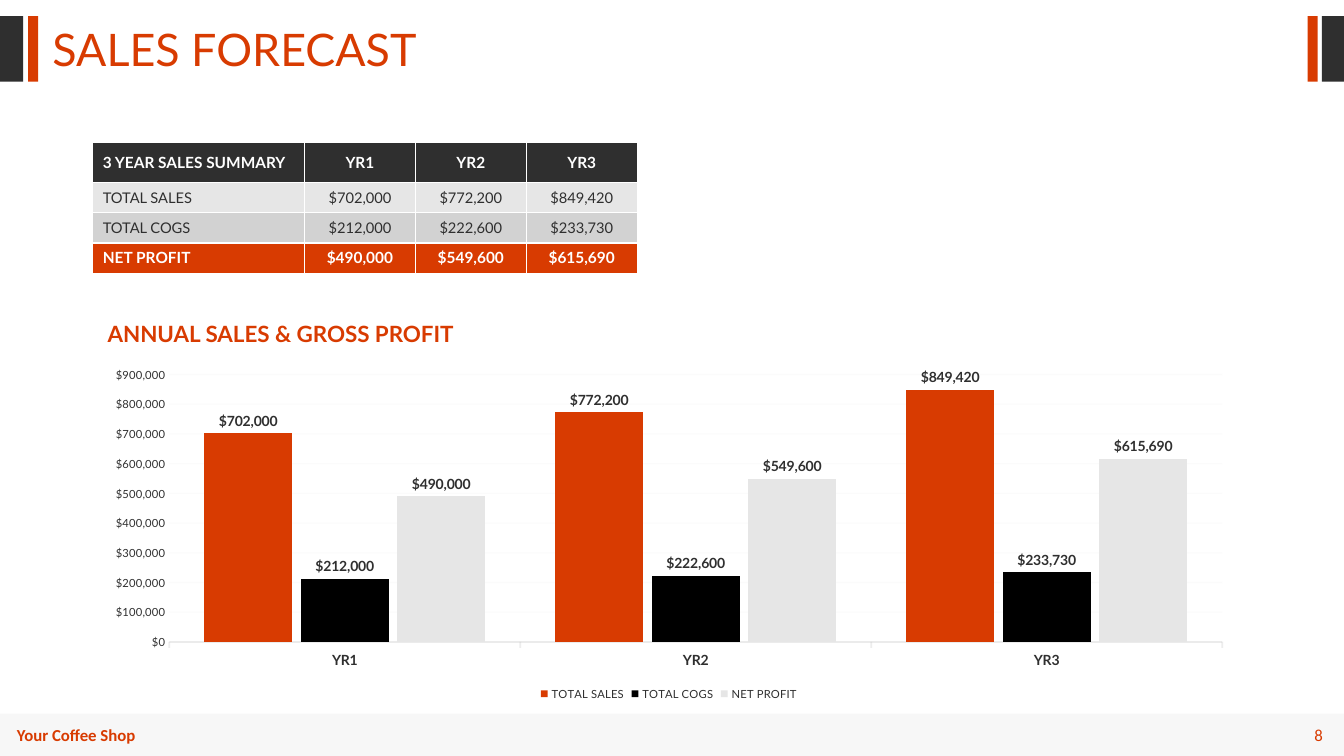
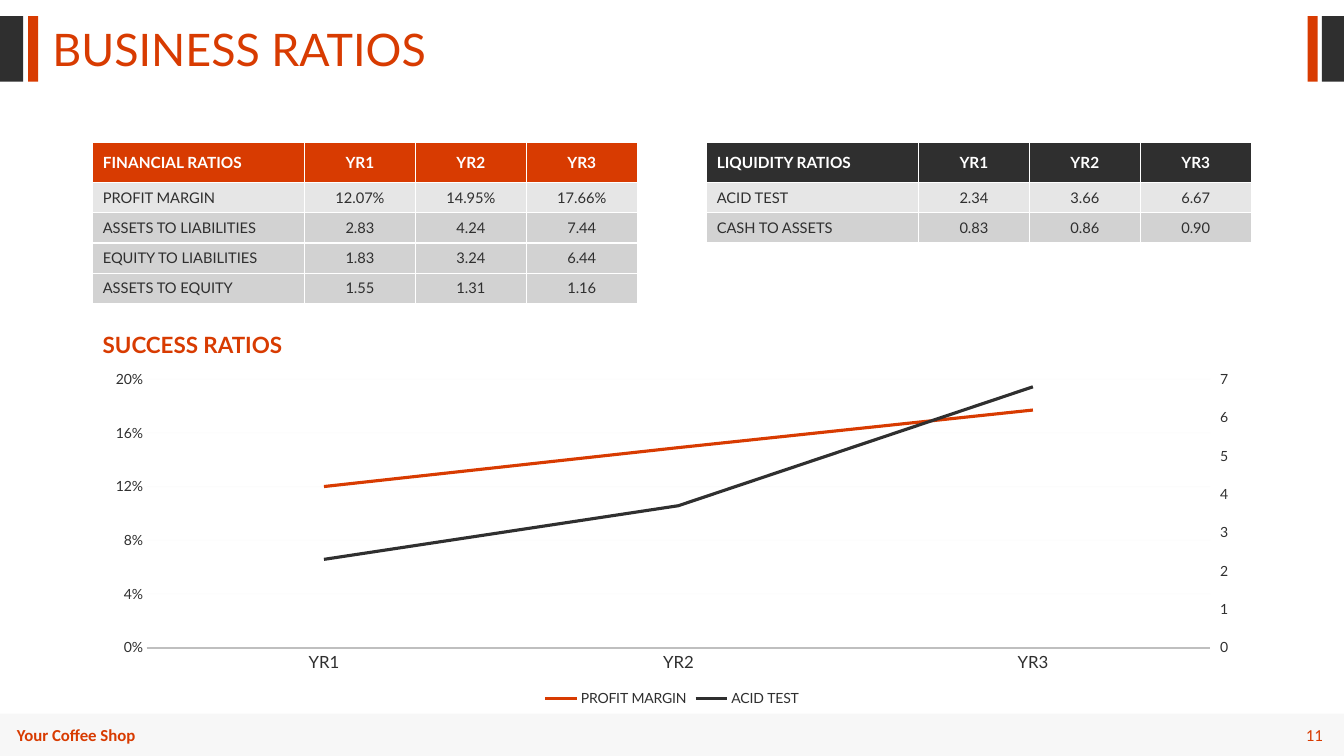
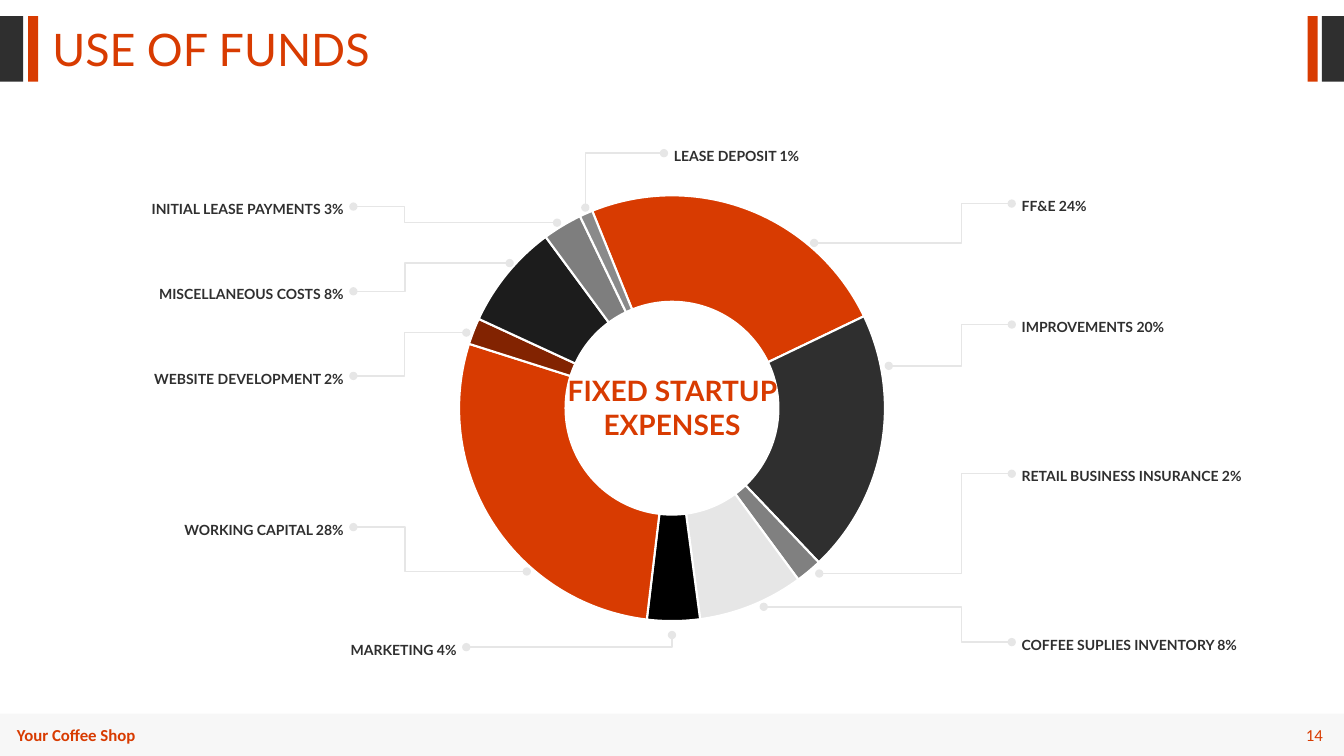
from collections import namedtuple
from copy import deepcopy
from dataclasses import dataclass

from lxml import etree
from pptx import Presentation
from pptx import util as u
from pptx.chart import axis as axes
from pptx.chart import data as chart_data
from pptx.dml.color import RGBColor
from pptx.enum import chart as kinds
from pptx.enum import shapes, text
from pptx.oxml.ns import qn


@dataclass(frozen=True)
class Theme:
    accent: str = "D83B01"
    dark: str = "2F2F2F"
    black: str = "000000"
    white: str = "FFFFFF"
    pale: str = "E6E6E6"
    silver: str = "D2D2D2"
    axis: str = "BFBFBF"
    grid: str = "F2F2F2"
    slices: tuple = ("D83B01", "2F2F2F", "808080", "E6E6E6", "000000",
                     "D83B01", "822301", "1C1C1C", "7E7E7E", "8A8A8A")
    font: str = "Lato"
    footer_font: str = "Calibri"
    title: float = 32
    center: float = 20
    heading: float = 16
    footer: float = 12
    table_head: float = 11
    table_body: float = 10.5
    label: float = 10
    small: float = 8


THEME = Theme()
LEFT, CENTER, RIGHT = text.PP_ALIGN.LEFT, text.PP_ALIGN.CENTER, text.PP_ALIGN.RIGHT
TOP, MIDDLE = text.MSO_ANCHOR.TOP, text.MSO_ANCHOR.MIDDLE
YEARS = ("YR1", "YR2", "YR3")
DOLLARS = '"$"#,##0'


class Box(namedtuple("Box", "left top width height")):
    def lengths(self):
        return [u.Inches(value) for value in self]


Callout = namedtuple("Callout", "label dot end bend")


def color(value):
    return RGBColor.from_string(value)


def set_font(font, size, fill=THEME.dark, bold=False, name=THEME.font):
    font.size, font.bold, font.name = u.Pt(size), bold, name
    font.color.rgb = color(fill)


def write(frame, words, align=LEFT, anchor=TOP, spacing=None, **font):
    frame.word_wrap = True
    frame.vertical_anchor = anchor
    para = frame.paragraphs[0]
    para.alignment = align
    if spacing:
        para.line_spacing = spacing
    span = para.add_run()
    span.text = words
    set_font(span.font, **font)


def add_text(page, box, words, **style):
    shape = page.shapes.add_textbox(*box.lengths())
    write(shape.text_frame, words, **style)
    return shape


def add_bar(page, box, fill):
    bar = page.shapes.add_shape(shapes.MSO_SHAPE.RECTANGLE, *box.lengths())
    bar.shadow.inherit = False
    bar.fill.solid()
    bar.fill.fore_color.rgb = color(fill)
    bar.line.fill.background()
    return bar


def fade(root, route, opacity):
    """Give each RGB colour under the XPath route an opacity in percent."""
    for node in root.xpath(route + "//a:srgbClr"):
        etree.SubElement(node, qn("a:alpha"), val=str(opacity * 1000))


def share_frame(layout, page):
    """Draw the bands and footer through a page, then move them to its layout."""
    band = add_bar(page, Box(0, 7.08, 13.33, 0.42), THEME.pale)
    fade(band.element, "./p:spPr", 30)
    parts = [band]
    for left, width, fill in ((0, 0.23, THEME.dark), (0.28, 0.1, THEME.accent),
                              (12.97, 0.1, THEME.accent), (13.11, 0.22, THEME.dark)):
        parts.append(add_bar(page, Box(left, 0.16, width, 0.65), fill))
    parts.append(add_text(page, Box(0.07, 7.14, 1.84, 0.3), "Your Coffee Shop",
                          size=THEME.footer, fill=THEME.accent, bold=True,
                          name=THEME.footer_font))
    for number, part in enumerate(parts, start=100):
        part.element.xpath(".//p:cNvPr")[0].set("id", str(number))
        layout.shapes.element.append(part.element)


def add_page(deck, layout, title, number):
    page = deck.slides.add_slide(layout)
    frame = page.shapes.title.text_frame
    frame.auto_size = text.MSO_AUTO_SIZE.NONE
    write(frame, title, spacing=0.8, size=THEME.title, fill=THEME.accent)
    add_text(page, Box(12.35, 7.14, 0.87, 0.3), str(number), align=RIGHT, anchor=MIDDLE,
             size=THEME.footer, fill=THEME.accent, name=THEME.footer_font)
    return page


def add_heading(page, box, words, align=LEFT):
    add_text(page, box, words, align=align, size=THEME.heading,
             fill=THEME.accent, bold=True)


def add_year_table(page, left, top, name, rows, head_fill, total=False):
    """Place a table with a column per year; total marks the last row."""
    heights = [0.4] + [0.3] * len(rows)
    widths = [2.1, 1.1, 1.1, 1.1]
    box = Box(left, top, sum(widths), sum(heights))
    table = page.shapes.add_table(len(heights), len(widths), *box.lengths()).table
    table.horz_banding = False
    for column, width in zip(table.columns, widths):
        column.width = u.Inches(width)
    for index, (height, values) in enumerate(zip(heights, [(name, *YEARS), *rows])):
        table.rows[index].height = u.Inches(height)
        is_total = total and index == len(rows)
        strong = index == 0 or is_total
        if strong:
            fill = THEME.accent if is_total else head_fill
        else:
            fill = THEME.pale if index == 1 else THEME.silver
        for column, value in enumerate(values):
            cell = table.cell(index, column)
            cell.fill.solid()
            cell.fill.fore_color.rgb = color(fill)
            cell.vertical_anchor = MIDDLE
            write(cell.text_frame, value, align=CENTER if column else LEFT, anchor=MIDDLE,
                  size=THEME.table_head if strong else THEME.table_body,
                  fill=THEME.white if strong else THEME.dark, bold=strong)


def add_chart(page, box, kind, categories, series, size, legend=True):
    data = chart_data.CategoryChartData()
    data.categories = categories
    for name, values in series:
        data.add_series(name, values)
    chart = page.shapes.add_chart(kind, *box.lengths(), data).chart
    chart.has_title = False
    set_font(chart.font, size)
    chart.plots[0].vary_by_categories = False
    chart.has_legend = legend
    if legend:
        chart.legend.position = kinds.XL_LEGEND_POSITION.BOTTOM
        chart.legend.include_in_layout = False
        set_font(chart.legend.font, size)
    return chart


def style_category_axis(axis, size, width, tick=kinds.XL_TICK_MARK.NONE, bold=False):
    axis.major_tick_mark = tick
    axis.format.line.color.rgb = color(THEME.axis)
    axis.format.line.width = u.Pt(width)
    set_font(axis.tick_labels.font, size, bold=bold)


def style_value_axis(axis, size, maximum, unit, number_format, grid=None):
    axis.minimum_scale, axis.maximum_scale, axis.major_unit = 0, maximum, unit
    axis.major_tick_mark = kinds.XL_TICK_MARK.NONE
    axis.format.line.fill.background()
    axis.tick_labels.number_format = number_format
    axis.tick_labels.number_format_is_linked = False
    set_font(axis.tick_labels.font, size)
    axis.has_major_gridlines = bool(grid)
    if grid:
        line = axis.major_gridlines.format.line
        line.color.rgb = color(grid)
        line.width = u.Pt(0.75)


def add_sales_chart(page, box):
    chart = add_chart(page, box, kinds.XL_CHART_TYPE.COLUMN_CLUSTERED, YEARS,
                      (("TOTAL SALES", (702000, 772200, 849420)),
                       ("TOTAL COGS", (212000, 222600, 233730)),
                       ("NET PROFIT", (490000, 549600, 615690))), THEME.small)
    style_category_axis(chart.category_axis, THEME.label, 1.25,
                        kinds.XL_TICK_MARK.OUTSIDE, bold=True)
    style_value_axis(chart.value_axis, THEME.small, 900000, 100000, DOLLARS, THEME.grid)
    fade(chart.element, "//c:majorGridlines", 30)
    fade(chart.element, "//c:catAx/c:spPr", 27)
    plot = chart.plots[0]
    plot.gap_width, plot.overlap = 80, -10
    for series, fill in zip(plot.series, (THEME.accent, THEME.black, THEME.pale)):
        series.format.fill.solid()
        series.format.fill.fore_color.rgb = color(fill)
        labels = series.data_labels
        labels.show_value = True
        labels.position = kinds.XL_LABEL_POSITION.OUTSIDE_END
        labels.number_format = DOLLARS
        labels.number_format_is_linked = False
        set_font(labels.font, THEME.label, bold=True)


def add_right_axis(chart):
    """Move the second line to its own axes and return the new value axis."""
    area = chart.element.xpath("//c:plotArea")[0]
    left_lines = area.xpath("c:lineChart")[0]
    right_lines = deepcopy(left_lines)
    left_lines.remove(left_lines.xpath("c:ser")[1])
    right_lines.remove(right_lines.xpath("c:ser")[0])
    left_lines.addnext(right_lines)
    old_category, old_value = area.xpath("c:catAx")[0], area.xpath("c:valAx")[0]
    category, value = deepcopy(old_category), deepcopy(old_value)
    old_value.addnext(value)
    value.addnext(category)
    new_ids = {old_category.xpath("c:axId")[0].get("val"): "5001",
               old_value.xpath("c:axId")[0].get("val"): "5002"}
    for part in (right_lines, category, value):
        for node in part.xpath("c:axId | c:crossAx"):
            node.set("val", new_ids[node.get("val")])
    value.xpath("c:axPos")[0].set("val", "r")
    hidden_axis, right_axis = axes.CategoryAxis(category), axes.ValueAxis(value)
    hidden_axis.visible = False
    hidden_axis.crosses = kinds.XL_AXIS_CROSSES.MAXIMUM
    right_axis.tick_label_position = kinds.XL_TICK_LABEL_POSITION.HIGH
    return right_axis


def add_ratio_chart(page, box):
    chart = add_chart(page, box, kinds.XL_CHART_TYPE.LINE, YEARS,
                      (("PROFIT MARGIN", (0.12, 0.149, 0.177)),
                       ("ACID TEST", (2.3, 3.7, 6.8))), THEME.label)
    for series, stroke in zip(chart.plots[0].series, (THEME.accent, THEME.dark)):
        series.smooth = False
        series.format.line.color.rgb = color(stroke)
        series.format.line.width = u.Pt(2.25)
    category_axis, left_axis = chart.category_axis, chart.value_axis
    right_axis = add_right_axis(chart)
    style_category_axis(category_axis, THEME.footer, 1.5)
    style_value_axis(left_axis, THEME.label, 0.2, 0.04, "0%", THEME.pale)
    style_value_axis(right_axis, THEME.label, 7, 1, "#,##0")
    fade(chart.element, "//c:majorGridlines", 10)


def add_funds_ring(page, box):
    """Place the ring with its title and return the centre."""
    values = (24, 20, 2, 8, 4, 28, 2, 8, 3, 1)
    chart = add_chart(page, box, kinds.XL_CHART_TYPE.DOUGHNUT,
                      [str(number + 1) for number in range(len(values))],
                      [("Series 1", values)], THEME.label, legend=False)
    for node, value in (("firstSliceAng", 338), ("holeSize", 64)):
        chart.element.xpath(f"//c:{node}")[0].set("val", str(value))
    ring = chart.plots[0].series[0]
    for index, fill in enumerate(THEME.slices):
        look = ring.points[index].format
        look.fill.solid()
        look.fill.fore_color.rgb = color(fill)
        look.line.color.rgb = color(THEME.white)
        look.line.width = u.Pt(1.5)
    x, y = box.left + box.width / 2, box.top + box.height / 2
    add_text(page, Box(x - 1.51, y - 0.39, 3.02, 0.77), "FIXED STARTUP EXPENSES",
             align=CENTER, size=THEME.center, fill=THEME.accent, bold=True)
    return x, y


def add_callout(page, x, y, callout):
    """Join a dot on the ring to its label; places are offsets from the centre x, y."""
    (dot_x, dot_y), (end_x, end_y) = callout.dot, callout.end
    line = page.shapes.add_connector(
        shapes.MSO_CONNECTOR.ELBOW, *(u.Inches(value) for value in
                                      (x + dot_x, y + dot_y, x + end_x, y + end_y)))
    line.line.color.rgb = color(THEME.pale)
    line.line.width = u.Pt(1)
    bend = round((callout.bend - dot_x) / (end_x - dot_x) * 100000)
    element = line.element
    etree.SubElement(element.xpath(".//a:avLst")[0], qn("a:gd"),
                     name="adj1", fmla=f"val {bend}")
    for end in ("a:headEnd", "a:tailEnd"):
        etree.SubElement(element.xpath(".//a:ln")[0], qn(end), type="oval")
    etree.SubElement(element.xpath("./p:spPr")[0], qn("a:effectLst"))
    width, to_right = 3.09, end_x > dot_x
    left = x + end_x - (0 if to_right else width)
    add_text(page, Box(left, y + end_y - 0.14, width, 0.28), callout.label,
             align=LEFT if to_right else RIGHT, spacing=1.2, size=THEME.label, bold=True)


def fill_sales_page(page):
    add_year_table(page, 0.92, 1.41, "3 YEAR SALES SUMMARY",
                   (("TOTAL SALES", "$702,000", "$772,200", "$849,420"),
                    ("TOTAL COGS", "$212,000", "$222,600", "$233,730"),
                    ("NET PROFIT", "$490,000", "$549,600", "$615,690")),
                   THEME.dark, total=True)
    add_heading(page, Box(0.92, 3.13, 3.73, 0.37), "ANNUAL SALES & GROSS PROFIT", CENTER)
    add_sales_chart(page, Box(0.92, 3.58, 11.43, 3.41))


def fill_ratios_page(page):
    add_year_table(page, 0.92, 1.41, "FINANCIAL RATIOS",
                   (("PROFIT MARGIN", "12.07%", "14.95%", "17.66%"),
                    ("ASSETS TO LIABILITIES", "2.83", "4.24", "7.44"),
                    ("EQUITY TO LIABILITIES", "1.83", "3.24", "6.44"),
                    ("ASSETS TO EQUITY", "1.55", "1.31", "1.16")), THEME.accent)
    add_year_table(page, 7.01, 1.41, "LIQUIDITY RATIOS",
                   (("ACID TEST", "2.34", "3.66", "6.67"),
                    ("CASH TO ASSETS", "0.83", "0.86", "0.90")), THEME.dark)
    add_heading(page, Box(0.92, 3.24, 2.02, 0.37), "SUCCESS RATIOS")
    add_ratio_chart(page, Box(0.92, 3.61, 11.49, 3.44))


def fill_funds_page(page):
    x, y = add_funds_ring(page, Box(3.29, 1.8, 6.75, 4.5))
    right, right_bend, left, left_bend = 3.37, 2.87, -3.16, -2.65
    for callout in (
            Callout("FF&E 24%", (1.41, -1.64), (right, -2.03), right_bend),
            Callout("IMPROVEMENTS 20%", (2.15, -0.42), (right, -0.83), right_bend),
            Callout("RETAIL BUSINESS INSURANCE 2%", (1.46, 1.64), (right, 0.65), right_bend),
            Callout("COFFEE SUPLIES INVENTORY 8%", (0.91, 1.97), (right, 2.32), right_bend),
            Callout("MARKETING 4%", (0, 2.25), (-2.04, 2.37), 0),
            Callout("WORKING CAPITAL 28%", (-1.44, 1.62), (left, 1.18), left_bend),
            Callout("WEBSITE DEVELOPMENT 2%", (-2.04, -0.75), (left, -0.32), left_bend),
            Callout("MISCELLANEOUS COSTS 8%", (-1.61, -1.44), (left, -1.16), left_bend),
            Callout("INITIAL LEASE PAYMENTS 3%", (-1.14, -1.84), (left, -2), left_bend),
            Callout("LEASE DEPOSIT 1%", (-0.86, -1.99), (-0.08, -2.53), -0.86)):
        add_callout(page, x, y, callout)


def main():
    deck = Presentation()
    deck.slide_width, deck.slide_height = u.Inches(13.33), u.Inches(7.5)
    layout = deck.slide_layouts.get_by_name("Title Only")
    title = layout.placeholders[0]
    title.left, title.top, title.width, title.height = Box(0.42, 0.27, 6.67, 0.54).lengths()
    pages = [add_page(deck, layout, *heading) for heading in
             (("SALES FORECAST", 8), ("BUSINESS RATIOS", 11), ("USE OF FUNDS", 14))]
    share_frame(layout, pages[0])
    for fill_page, page in zip((fill_sales_page, fill_ratios_page, fill_funds_page), pages):
        fill_page(page)
    deck.save("out.pptx")


if __name__ == "__main__":
    main()
